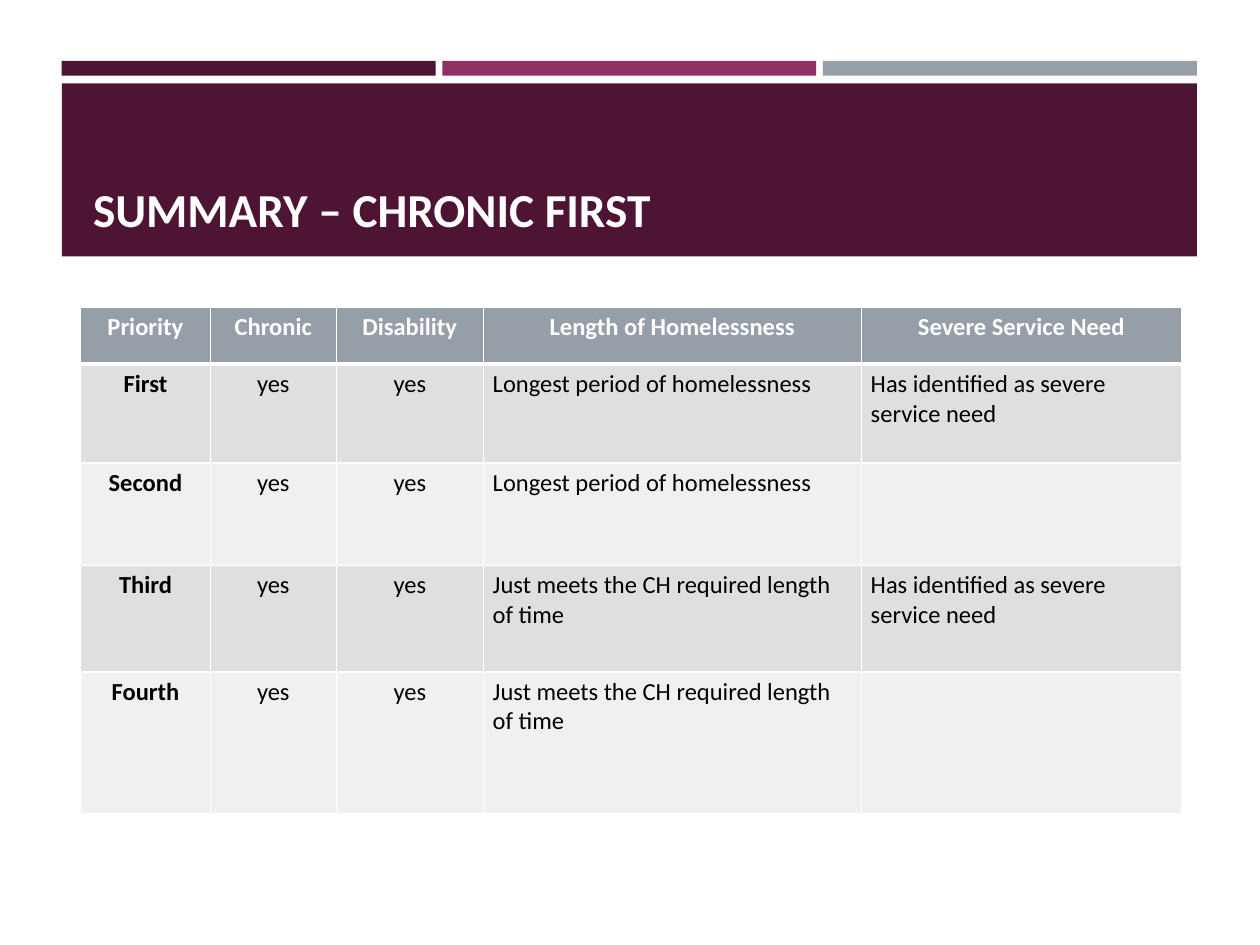
from dataclasses import dataclass

from lxml.etree import SubElement
from pptx import Presentation
from pptx.dml.color import RGBColor
from pptx.enum.shapes import MSO_SHAPE
from pptx.enum.text import MSO_ANCHOR, PP_ALIGN
from pptx.oxml.ns import qn
from pptx.slide import Slide
from pptx.table import _Cell
from pptx.util import Pt


@dataclass(frozen=True)
class Theme:
    font: str = "Calibri"
    title_size: float = 27
    table_size: float = 14
    plum: str = "4D1434"
    magenta: str = "903163"
    grey: str = "969FA7"
    band_dark: str = "DDDFE1"
    band_light: str = "EFF0F1"
    white: str = "FFFFFF"
    black: str = "000000"


@dataclass(frozen=True)
class Box:
    left: float
    top: float
    width: float
    height: float

    def emu(self) -> tuple:
        return Pt(self.left), Pt(self.top), Pt(self.width), Pt(self.height)


@dataclass(frozen=True)
class Column:
    heading: str
    width: float
    align: PP_ALIGN = PP_ALIGN.CENTER
    bold: bool = False


@dataclass(frozen=True)
class Row:
    height: float
    texts: tuple


T = Theme()

# Page geometry
BANNER = Box(35.3, 47.6, 648.6, 98.9)
BAR_TOP, BAR_HEIGHT, BAR_GAP = 34.8, 8.4, 3.8
TITLE = Box(46.1, 54, 629.3, 85)
TABLE_LEFT, TABLE_TOP = 46.1, 175.7

# Table content
COLUMNS = (
    Column("Priority", 74.1, bold=True),
    Column("Chronic", 72),
    Column("Disability", 84),
    Column("Length of Homelessness", 216, PP_ALIGN.LEFT),
    Column("Severe Service Need", 183, PP_ALIGN.LEFT),
)
LONGEST = "Longest period of homelessness"
JUST_MEETS = "Just meets the CH required length of time"
SEVERE = "Has identified as severe service need"
ROWS = (
    Row(32.4, tuple(c.heading for c in COLUMNS)),
    Row(56.5, ("First", "yes", "yes", LONGEST, SEVERE)),
    Row(58.5, ("Second", "yes", "yes", LONGEST, "")),
    Row(61, ("Third", "yes", "yes", JUST_MEETS, SEVERE)),
    Row(81.2, ("Fourth", "yes", "yes", JUST_MEETS, "")),
)


def add_rect(s: Slide, box: Box, color: str) -> None:
    sp = s.shapes.add_shape(MSO_SHAPE.RECTANGLE, *box.emu())
    sp.shadow.inherit = False
    sp.fill.solid()
    sp.fill.fore_color.rgb = RGBColor.from_string(color)
    sp.line.fill.background()


def add_run(p, text: str, size: float, color: str, bold: bool) -> None:
    r = p.add_run()
    r.text = text
    r.font.name = T.font
    r.font.size = Pt(size)
    r.font.bold = bold
    r.font.color.rgb = RGBColor.from_string(color)


def add_title(s: Slide, text: str) -> None:
    tf = s.shapes.add_textbox(*TITLE.emu()).text_frame
    tf.word_wrap = True
    tf.vertical_anchor = MSO_ANCHOR.BOTTOM
    add_run(tf.paragraphs[0], text, T.title_size, T.white, True)


def set_borders(cell: _Cell, top: float, bottom: float) -> None:
    """Borders go in before the fill, as the schema orders them."""
    tc_pr = cell._tc.get_or_add_tcPr()
    for side, width in (("L", 1), ("R", 1), ("T", top), ("B", bottom)):
        ln = SubElement(tc_pr, qn(f"a:ln{side}"), w=str(Pt(width)))
        fill = SubElement(ln, qn("a:solidFill"))
        SubElement(fill, qn("a:srgbClr"), val=T.white)


def fill_cell(cell: _Cell, text: str, col: Column, row: int) -> None:
    header = row == 0
    set_borders(cell, top=3 if row == 1 else 1, bottom=3 if header else 1)
    band = T.band_dark if row % 2 else T.band_light
    cell.fill.solid()
    cell.fill.fore_color.rgb = RGBColor.from_string(T.grey if header else band)
    cell.margin_left = cell.margin_right = Pt(5.4)
    cell.margin_top = cell.margin_bottom = Pt(2.7)
    p = cell.text_frame.paragraphs[0]
    p.alignment = PP_ALIGN.CENTER if header else col.align
    p.font.size = Pt(T.table_size)
    if text:
        add_run(p, text, T.table_size, T.white if header else T.black, header or col.bold)


def add_priority_table(s: Slide) -> None:
    box = Box(TABLE_LEFT, TABLE_TOP, sum(c.width for c in COLUMNS), sum(r.height for r in ROWS))
    table = s.shapes.add_table(len(ROWS), len(COLUMNS), *box.emu()).table
    for j, col in enumerate(COLUMNS):
        table.columns[j].width = Pt(col.width)
    for i, row in enumerate(ROWS):
        table.rows[i].height = Pt(row.height)
        for j, (text, col) in enumerate(zip(row.texts, COLUMNS)):
            fill_cell(table.cell(i, j), text, col, i)


def main() -> None:
    prs = Presentation()
    prs.slide_width, prs.slide_height = Pt(720), Pt(540)
    s = prs.slides.add_slide(prs.slide_layouts[6])

    # Three accent bars share the banner's width
    bar_width = (BANNER.width - 2 * BAR_GAP) / 3
    for i, color in enumerate((T.plum, T.magenta, T.grey)):
        left = BANNER.left + i * (bar_width + BAR_GAP)
        add_rect(s, Box(left, BAR_TOP, bar_width, BAR_HEIGHT), color)

    # Title banner
    add_rect(s, BANNER, T.plum)
    add_title(s, "SUMMARY – CHRONIC FIRST")

    # Priority table
    add_priority_table(s)
    prs.save("out.pptx")


if __name__ == "__main__":
    main()
